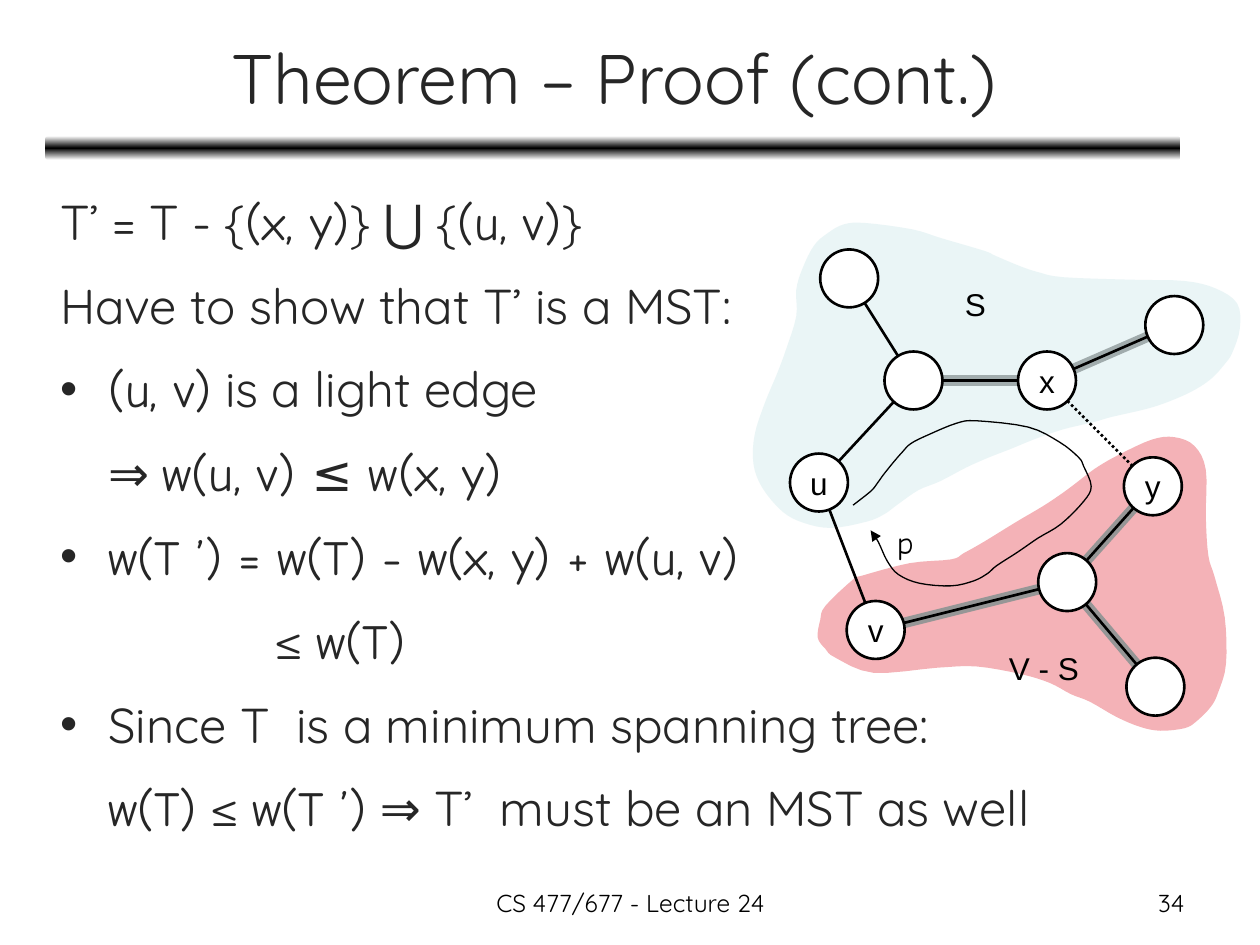
from dataclasses import dataclass
from math import hypot
from typing import Optional

from lxml.etree import SubElement
from copy import deepcopy
from pptx import Presentation
from pptx.dml.color import RGBColor
from pptx.enum.dml import MSO_LINE
from pptx.enum.shapes import MSO_CONNECTOR, MSO_SHAPE
from pptx.enum.text import MSO_ANCHOR, PP_ALIGN
from pptx.oxml.ns import qn
from pptx.util import Cm, Pt

COLORS = {"text": "262626", "black": "000000", "white": "FFFFFF",
          "tree": "969696", "s_side": "BBE0E3", "v_side": "DD0111"}
SANS, COMIC, PLAIN = "Quicksand", "Comic Neue", "Arial"
RADIUS = 0.23
HANG = 0.38


@dataclass(frozen=True)
class Node:
    x: float
    y: float
    label: str = ""


@dataclass(frozen=True)
class Edge:
    start: str
    end: str
    highlighted: bool = False
    dotted: bool = False


@dataclass(frozen=True)
class Line:
    runs: tuple[tuple[str, str], ...]
    bullet: bool = False
    left: float = HANG
    hanging: bool = False


NODES = {
    "top": Node(6.74, 2.21), "hub": Node(7.25, 3.02), "x": Node(8.31, 3.02, "x"),
    "right": Node(9.32, 2.58), "u": Node(6.5, 3.83, "u"), "y": Node(9.15, 3.86, "y"),
    "middle": Node(8.47, 4.62), "bottom": Node(9.17, 5.45), "v": Node(6.95, 5, "v"),
}
EDGES = [
    Edge("top", "hub"), Edge("u", "hub"), Edge("u", "v"),
    Edge("hub", "x", highlighted=True), Edge("x", "right", highlighted=True),
    Edge("v", "middle", highlighted=True), Edge("middle", "y", highlighted=True),
    Edge("middle", "bottom", highlighted=True), Edge("x", "y", dotted=True),
]
V_REGION = [
    (7.55, 4.44), (7.22, 4.47), (6.84, 4.57), (6.77, 4.6), (6.55, 4.81), (6.51, 4.92),
    (6.49, 5.06), (6.55, 5.15), (6.63, 5.22), (6.93, 5.34), (7.44, 5.3), (7.75, 5.29),
    (8.1, 5.35), (8.33, 5.42), (8.5, 5.51), (8.65, 5.57), (8.86, 5.69), (9.05, 5.77),
    (9.21, 5.8), (9.4, 5.78), (9.49, 5.73), (9.61, 5.61), (9.67, 5.49), (9.73, 5.27),
    (9.72, 4.9), (9.64, 4.58), (9.59, 4.41), (9.57, 4.1), (9.57, 3.73), (9.48, 3.54),
    (9.32, 3.47), (9.14, 3.49), (8.88, 3.61), (8.69, 3.72), (8.48, 3.88), (8.29, 4.01),
    (8.07, 4.14), (7.81, 4.3), (7.65, 4.39)]
S_REGION = [
    (6.57, 1.85), (6.46, 1.95), (6.37, 2.13), (6.32, 2.3), (6.32, 2.51), (6.24, 2.77),
    (6.17, 2.96), (6.07, 3.2), (5.99, 3.45), (5.98, 3.68), (6.05, 3.87), (6.21, 4.06),
    (6.38, 4.15), (6.6, 4.19), (6.88, 4.14), (7.02, 4.08), (7.13, 4), (7.29, 3.89),
    (7.46, 3.82), (7.67, 3.71), (7.85, 3.63), (8.03, 3.56), (8.2, 3.49), (8.43, 3.41),
    (8.68, 3.35), (8.82, 3.31), (9.12, 3.24), (9.32, 3.17), (9.49, 3.09), (9.62, 3),
    (9.72, 2.89), (9.78, 2.8), (9.84, 2.61), (9.82, 2.41), (9.65, 2.29), (9.4, 2.23),
    (8.98, 2.22), (8.44, 2.2), (8.24, 2.16), (8.09, 2.11), (7.9, 2.03), (7.81, 1.99),
    (7.47, 1.89), (7.24, 1.82), (6.87, 1.77), (6.7, 1.78)]
CYCLE = [
    (6.77, 4.01), (6.91, 3.9), (6.96, 3.84), (7.01, 3.77), (7.09, 3.67), (7.16, 3.59),
    (7.23, 3.52), (7.37, 3.45), (7.59, 3.36), (7.75, 3.34), (8.16, 3.39), (8.41, 3.51),
    (8.56, 3.63), (8.6, 3.7), (8.66, 3.86), (8.6, 3.98), (8.42, 4.16), (8.24, 4.27),
    (8.08, 4.38), (7.91, 4.49), (7.84, 4.55), (7.73, 4.61), (7.55, 4.65), (7.3, 4.63),
    (7.13, 4.56), (7.04, 4.45), (6.97, 4.3), (6.91, 4.21)]
PROOF = [
    Line((("T’ = T - {", SANS), ("(x, y)", COMIC), ("} ⋃ {", SANS),
          ("(u, v)", COMIC), ("}", SANS)), hanging=True),
    Line((("Have to show that T’ is a MST:", SANS),), hanging=True),
    Line((("(u, v)", COMIC), (" is a light edge", SANS)), bullet=True, hanging=True),
    Line((("⇒ ", SANS), ("w(u, v) ≤ w(x, y)", COMIC))),
    Line((("w(T ’) = w(T) - w(x, y) + w(u, v)", COMIC),), bullet=True, hanging=True),
    Line((("≤ ", SANS), ("w(T)", COMIC)), left=1.7),
    Line((("Since T  is a minimum spanning tree:", SANS),), bullet=True, hanging=True),
    Line((("w(T)", COMIC), (" ≤ ", SANS), ("w(T ’)", COMIC),
          (" ⇒ T’  must be an MST as well", SANS))),
]


def inches(value: float) -> Cm:
    """Turn a layout coordinate in inches into a length."""
    return Cm(value * 2.54)


def color(name: str) -> RGBColor:
    return RGBColor.from_string(COLORS[name])


def add_run(paragraph, text: str, font: str, size: float, color_name: str) -> None:
    run = paragraph.add_run()
    run.text = text
    run.font.name, run.font.size = font, Pt(size)
    run.font.color.rgb = color(color_name)


def add_box(slide, left: float, top: float, width: float, height: float, wrap: bool = True):
    frame = slide.shapes.add_textbox(*map(inches, (left, top, width, height))).text_frame
    frame.word_wrap = wrap
    return frame


def add_label(slide, box: tuple, text: str, font: str, size: float,
              alignment=PP_ALIGN.LEFT, color_name: str = "black", wrap: bool = True):
    frame = add_box(slide, *box, wrap=wrap)
    frame.paragraphs[0].alignment = alignment
    add_run(frame.paragraphs[0], text, font, size, color_name)
    return frame


def add_proof(slide) -> None:
    frame = add_box(slide, 0.38, 1.33, 9, 5.92)
    for index, line in enumerate(PROOF):
        paragraph = frame.add_paragraph() if index else frame.paragraphs[0]
        paragraph.line_spacing, paragraph.space_before = 1.3, Pt(4.2)
        properties = paragraph._p.get_or_add_pPr()
        properties.set("marL", str(inches(line.left)))
        properties.set("indent", str(-inches(HANG) if line.hanging else 0))
        if line.bullet:
            SubElement(properties, qn("a:buFont"), typeface=PLAIN)
            SubElement(properties, qn("a:buChar"), char="•")
        for text, font in line.runs:
            add_run(paragraph, text, font, 28, "text")


def add_divider(slide) -> None:
    bar = slide.shapes.add_shape(MSO_SHAPE.ROUNDED_RECTANGLE,
                                 *map(inches, (0.36, 1.08, 9.01, 0.19)))
    bar.shadow.inherit = False
    bar.line.fill.background()
    bar.fill.gradient()
    bar.fill.gradient_angle = 90
    stop_list = bar._element.spPr.find(".//" + qn("a:gsLst"))
    stop_list.append(deepcopy(stop_list[-1]))
    for stop, name, position in zip(bar.fill.gradient_stops, ("white", "black", "white"), (0, 0.5, 1)):
        stop.color.rgb, stop.position = color(name), position


def smooth(points: list, closed: bool, steps: int = 4) -> list:
    """Sample a Catmull-Rom curve through the points."""
    count = len(points)

    def at(index: int):
        return points[index % count if closed else min(max(index, 0), count - 1)]

    curve = [points[0]]
    for i in range(count if closed else count - 1):
        for t in (step / steps for step in range(1, steps + 1)):
            curve.append(tuple(
                b + t * (c - a) / 2 + t**2 * (a - 2.5 * b + 2 * c - d / 2)
                + t**3 * (-a + 3 * b - 3 * c + d) / 2
                for a, b, c, d in zip(at(i - 1), at(i), at(i + 1), at(i + 2))))
    return curve


def add_curve(slide, points: list, fill: Optional[str] = None) -> None:
    """Draw a translucent region when filled, else an open arrow."""
    closed = fill is not None
    start, *rest = [(inches(x), inches(y)) for x, y in smooth(points, closed)]
    builder = slide.shapes.build_freeform(*start)
    builder.add_line_segments(rest, close=closed)
    shape = builder.convert_to_shape()
    shape.shadow.inherit = False
    if closed:
        shape.fill.solid()
        shape.fill.fore_color.rgb = color(fill)
        SubElement(shape._element.spPr.find(".//" + qn("a:srgbClr")), qn("a:alpha"), val="30000")
        shape.line.fill.background()
    else:
        shape.fill.background()
        shape.line.color.rgb, shape.line.width = color("black"), Pt(0.75)
        SubElement(shape.line._get_or_add_ln(), qn("a:tailEnd"), type="triangle")


def add_edge(slide, edge: Edge, color_name: str, width: float) -> None:
    """Join two nodes from rim to rim."""
    a, b = NODES[edge.start], NODES[edge.end]
    share = RADIUS / hypot(b.x - a.x, b.y - a.y)
    dx, dy = share * (b.x - a.x), share * (b.y - a.y)
    connector = slide.shapes.add_connector(
        MSO_CONNECTOR.STRAIGHT, *map(inches, (a.x + dx, a.y + dy, b.x - dx, b.y - dy)))
    connector.line.color.rgb, connector.line.width = color(color_name), Pt(width)
    if edge.dotted:
        connector.line.dash_style = MSO_LINE.ROUND_DOT
    SubElement(connector._element.spPr, qn("a:effectLst"))


def add_node(slide, node: Node) -> None:
    shape = slide.shapes.add_shape(MSO_SHAPE.OVAL, *map(
        inches, (node.x - RADIUS, node.y - RADIUS, 2 * RADIUS, 2 * RADIUS)))
    shape.shadow.inherit = False
    shape.fill.solid()
    shape.fill.fore_color.rgb = color("white")
    shape.line.color.rgb, shape.line.width = color("black"), Pt(1.5)
    if node.label:
        frame = shape.text_frame
        frame.word_wrap, frame.vertical_anchor = False, MSO_ANCHOR.MIDDLE
        frame.paragraphs[0].alignment = PP_ALIGN.CENTER
        add_run(frame.paragraphs[0], node.label, PLAIN, 18, "black")


def main() -> None:
    presentation = Presentation()
    presentation.slide_width, presentation.slide_height = Cm(25.4), Cm(19.05)
    slide = presentation.slides.add_slide(presentation.slide_layouts[6])
    add_divider(slide)
    title = add_label(slide, (0.37, 0.11, 9, 0.99), "Theorem – Proof (cont.)", SANS, 40,
                      PP_ALIGN.CENTER, "text")
    title.vertical_anchor = MSO_ANCHOR.MIDDLE
    add_proof(slide)
    add_curve(slide, V_REGION, "v_side")
    for edge in EDGES:
        if edge.highlighted:
            add_edge(slide, edge, "tree", 6)
    add_curve(slide, S_REGION, "s_side")
    for edge in EDGES:
        add_edge(slide, edge, "black", 1.5)
    for node in NODES.values():
        add_node(slide, node)
    add_curve(slide, CYCLE)
    for box, text, font in (((7.56, 2.21, 0.37, 0.4), "S", PLAIN),
                            ((7.91, 5.1, 0.76, 0.4), "V - S", PLAIN),
                            ((7.02, 4.1, 0.34, 0.4), "p", COMIC)):
        add_label(slide, box, text, font, 18, wrap=False)
    add_label(slide, (3.42, 7, 3.17, 0.35), "CS 477/677 - Lecture 24", SANS, 14, PP_ALIGN.CENTER)
    add_label(slide, (7.17, 7, 2.33, 0.35), "34", SANS, 14, PP_ALIGN.RIGHT)
    presentation.save("out.pptx")


if __name__ == "__main__":
    main()
